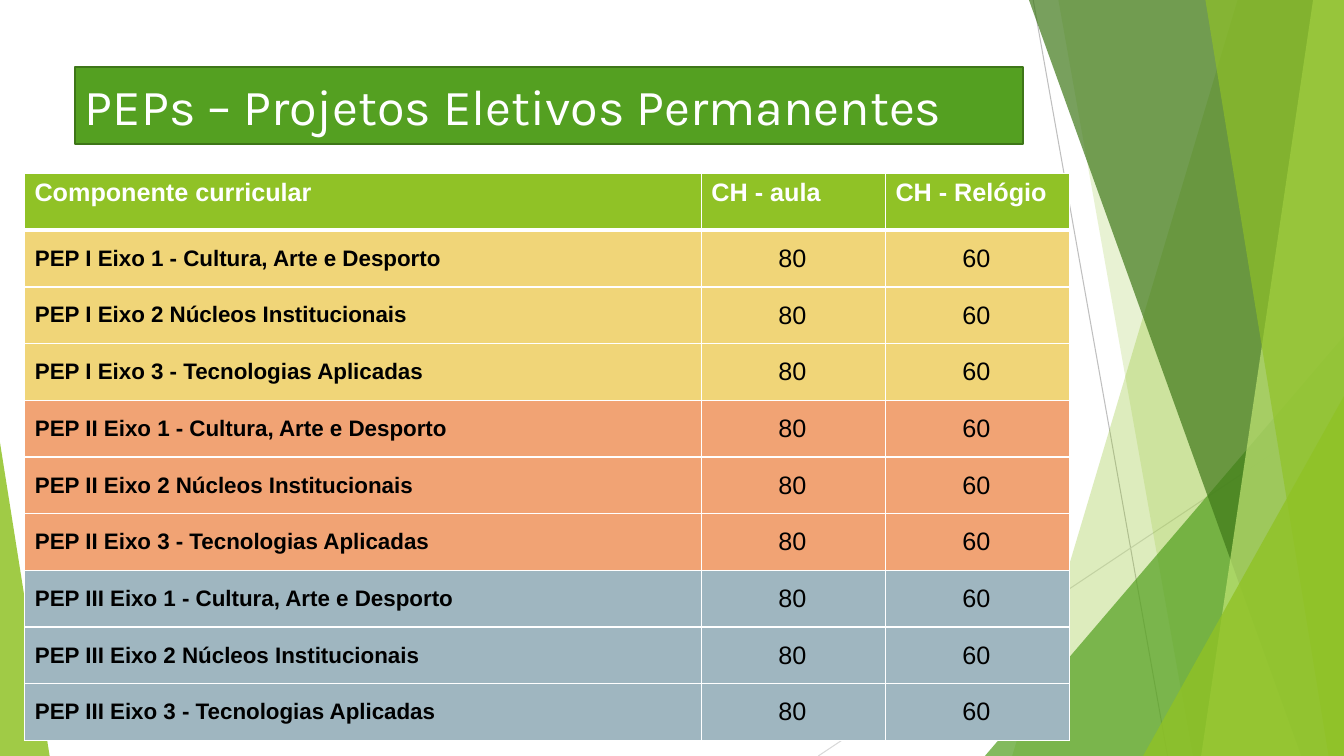
from lxml import etree
from pptx import Presentation
from pptx import util as u
from pptx.dml.color import RGBColor
from pptx.enum import shapes, text
from pptx.oxml import ns

Pt = u.Pt
COLORS = {
    "lime": "90C226", "green": "54A021", "moss": "3F7819", "pale": "C0E474",
    "edge": "3E7618", "white": "FFFFFF", "black": "000000",
    "line": "BFBFBF", "faint": "D9D9D9",
    "PEP I": "F0D578", "PEP II": "F1A374", "PEP III": "9FB6C0",
}
HEADINGS = ["Componente curricular", "CH - aula", "CH - Relógio"]
AXES = ["Eixo 1 - Cultura, Arte e Desporto", "Eixo 2 Núcleos Institucionais",
        "Eixo 3 - Tecnologias Aplicadas"]
LEVELS = ["PEP I", "PEP II", "PEP III"]


def rgb(name):
    return RGBColor.from_string(COLORS[name])


def add_xml(parent, tag, **attrs):
    return etree.SubElement(parent, ns.qn(tag), {k: str(v) for k, v in attrs.items()})


def paint(sp, color, opacity):
    sp.shadow.inherit = False
    sp.line.fill.background()
    sp.fill.solid()
    sp.fill.fore_color.rgb = rgb(color)
    srgb = sp.fill._xPr.find(".//" + ns.qn("a:srgbClr"))
    add_xml(srgb, "a:alpha", val=opacity * 1000)


def add_line(s, x1, y1, x2, y2, color):
    line = s.shapes.add_connector(shapes.MSO_CONNECTOR.STRAIGHT,
                                  Pt(x1), Pt(y1), Pt(x2), Pt(y2))
    line.line.color.rgb = rgb(color)
    line.line.width = Pt(0.75)
    add_xml(line._element.spPr, "a:effectLst")


def add_band(s, top_x, bottom_x, right, top, bottom, color, opacity):
    band = s.shapes.build_freeform(Pt(top_x), Pt(top))
    corners = [(right, top), (right, bottom), (bottom_x, bottom)]
    band.add_line_segments([(Pt(x), Pt(y)) for x, y in corners])
    paint(band.convert_to_shape(), color, opacity)


def add_wedge(s, x, bottom, w, h, tip, color, opacity):
    sp = s.shapes.add_shape(shapes.MSO_SHAPE.ISOSCELES_TRIANGLE,
                            Pt(x), Pt(bottom - h), Pt(w), Pt(h))
    sp.adjustments[0] = tip
    paint(sp, color, opacity)


def add_facets(s, x, y, w, h):
    right, bottom = x + w, y + h
    add_line(s, right - 222, y, right - 126, bottom, "line")
    add_line(s, right, y + 290, right - 375.5, bottom, "faint")

    def band(top_inset, bottom_inset, color, opacity):
        add_band(s, right - top_inset, right - bottom_inset, right, y, bottom, color, opacity)

    band(76, 237, "lime", 30)
    band(204, 108, "lime", 20)
    add_wedge(s, right - 256.5, bottom, 256.5, 300, 1, "green", 72)
    band(225, 30.5, "moss", 70)
    band(22, 102, "pale", 70)
    band(99, 11, "lime", 65)
    add_wedge(s, right - 143.5, bottom, 143.5, 257, 1, "lime", 80)
    add_wedge(s, x, bottom, 35.5, 224, 0, "lime", 85)


def add_title(s, x, y, w, h):
    sp = s.shapes.title
    s.shapes._spTree.append(sp._element)
    sp.left, sp.top, sp.width, sp.height = Pt(x), Pt(y), Pt(w), Pt(h)
    sp.fill.solid()
    sp.fill.fore_color.rgb = rgb("green")
    sp.line.color.rgb = rgb("edge")
    sp.line.width = Pt(1.5)
    tf = sp.text_frame
    tf.text = "PEPs – Projetos Eletivos Permanentes"
    tf.word_wrap = True
    tf.auto_size = text.MSO_AUTO_SIZE.NONE
    tf.vertical_anchor = text.MSO_ANCHOR.MIDDLE
    p = tf.paragraphs[0]
    p.alignment = text.PP_ALIGN.LEFT
    style_run(p.runs[0], 36, "white", False, "Karla")


def style_run(r, size, color, bold, font="Arial"):
    r.font.name = font
    r.font.size = Pt(size)
    r.font.bold = bold
    r.font.color.rgb = rgb(color)


def add_borders(cell, top, bottom):
    tcPr = cell._tc.get_or_add_tcPr()
    for side, width in (("L", 1), ("R", 1), ("T", top), ("B", bottom)):
        ln = add_xml(tcPr, "a:ln" + side, w=Pt(width))
        add_xml(add_xml(ln, "a:solidFill"), "a:srgbClr", val=COLORS["white"])


def format_cell(cell, value, row, col, color):
    add_borders(cell, 3 if row == 1 else 1, 3 if row == 0 else 1)
    cell.fill.solid()
    cell.fill.fore_color.rgb = rgb(color)
    cell.text_frame.text = value
    p = cell.text_frame.paragraphs[0]
    if row == 0:
        style_run(p.runs[0], 18, "white", True)
        return
    cell.vertical_anchor = text.MSO_ANCHOR.MIDDLE
    cell.margin_left, cell.margin_right = Pt(2), Pt(3.5)
    cell.margin_top = cell.margin_bottom = 0
    if col == 0:
        p.alignment = text.PP_ALIGN.JUSTIFY
        p._p.get_or_add_pPr().set("marL", str(Pt(5.5)))
        style_run(p.runs[0], 16, "black", True)
    else:
        p.alignment = text.PP_ALIGN.CENTER
        style_run(p.runs[0], 18, "black", False)


def add_courses(s, x, y, w, h):
    rows = [("lime", HEADINGS)]
    rows += [(level, [f"{level} {axis}", "80", "60"]) for level in LEVELS for axis in AXES]
    table = s.shapes.add_table(len(rows), len(HEADINGS), Pt(x), Pt(y), Pt(w), Pt(h)).table
    table.horz_banding = False
    hours_w = 131.5
    for column, width in zip(table.columns, [w - 2 * hours_w, hours_w, hours_w]):
        column.width = Pt(width)
    for i, (color, values) in enumerate(rows):
        table.rows[i].height = Pt(h / len(rows))
        for j, value in enumerate(values):
            format_cell(table.cell(i, j), value, i, j, color)


def main():
    prs = Presentation()
    prs.slide_width, prs.slide_height = Pt(960), Pt(540)
    s = prs.slides.add_slide(prs.slide_layouts[5])
    add_facets(s, 0, 0, 960, 540)
    add_title(s, 53.5, 48, 677, 55)
    add_courses(s, 17.5, 124, 746.5, 405)
    prs.save("out.pptx")


if __name__ == "__main__":
    main()
